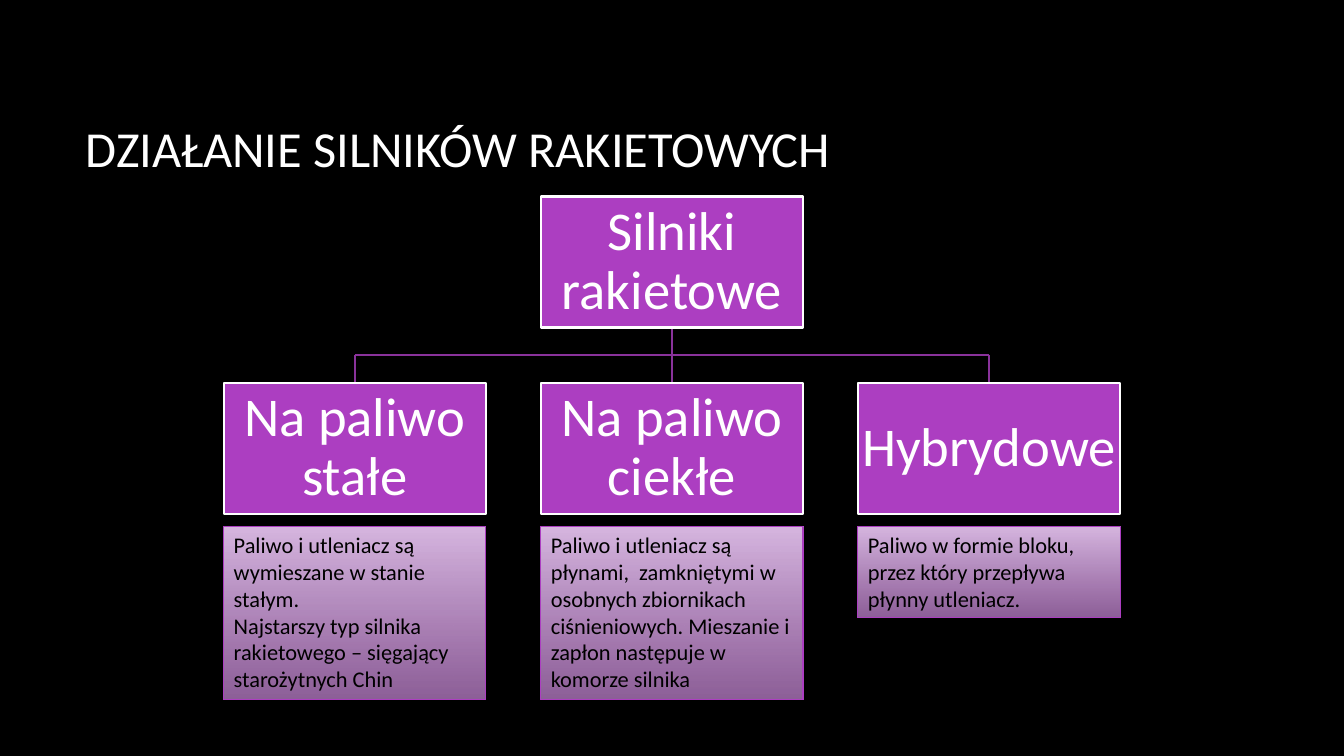
from lxml import etree
from pptx import Presentation
from pptx.dml.color import RGBColor
from pptx.enum.shapes import MSO_CONNECTOR, MSO_SHAPE
from pptx.enum.text import MSO_ANCHOR, MSO_AUTO_SIZE, PP_ALIGN
from pptx.oxml.ns import qn
from pptx.util import Inches, Pt

STRAIGHT = MSO_CONNECTOR.STRAIGHT
RECTANGLE = MSO_SHAPE.RECTANGLE
MIDDLE, TOP = MSO_ANCHOR.MIDDLE, MSO_ANCHOR.TOP
LEFT, CENTER = PP_ALIGN.LEFT, PP_ALIGN.CENTER
GROW = MSO_AUTO_SIZE.SHAPE_TO_FIT_TEXT

COLORS = {
    "background": "000000", "light": "FFFFFF", "dark": "000000",
    "box": "AC3EC1", "branch": "8A329B",
    "note_top": "D8B7E1", "note_bottom": "BF82CE",
}
rgb = {name: RGBColor.from_string(value) for name, value in COLORS.items()}

BOX_WIDTH, BOX_HEIGHT = 2.6, 1.3
FIRST_LEFT, COLUMN_STEP = 2.22, 3.145
ROOT_TOP, TYPE_TOP, NOTE_TOP = 1.95, 3.8, 5.22
ROOT_BOTTOM = ROOT_TOP + BOX_HEIGHT
BUS_Y = (ROOT_BOTTOM + TYPE_TOP) / 2

ENGINE_TYPES = [
    ("Na paliwo stałe", 1.72,
     ["Paliwo i utleniacz są wymieszane w stanie stałym.",
      "Najstarszy typ silnika rakietowego – sięgający starożytnych Chin"]),
    ("Na paliwo ciekłe", 1.72,
     ["Paliwo i utleniacz są płynami,  zamkniętymi w osobnych zbiornikach "
      "ciśnieniowych. Mieszanie i zapłon następuje w komorze silnika"]),
    ("Hybrydowe", 0.91,
     ["Paliwo w formie bloku, przez który przepływa płynny utleniacz."]),
]
lefts = [FIRST_LEFT + column * COLUMN_STEP for column in range(len(ENGINE_TYPES))]
centers = [left + BOX_WIDTH / 2 for left in lefts]

deck = Presentation()
deck.slide_width, deck.slide_height = Inches(13.33), Inches(7.5)
page = deck.slides.add_slide(deck.slide_layouts[5])
page.background.fill.solid()
page.background.fill.fore_color.rgb = rgb["background"]


def write(shape, texts, size, color, align, anchor):
    frame = shape.text_frame
    frame.word_wrap = True
    frame.vertical_anchor = anchor
    frame.text = "\n".join(texts)
    for para in frame.paragraphs:
        para.alignment = align
        for name, value in {"name": "Calibri", "size": Pt(size)}.items():
            setattr(para.font, name, value)
        para.font.color.rgb = rgb[color]


def add_box(left, top, height, line_width, line_color):
    box = page.shapes.add_shape(RECTANGLE, Inches(left), Inches(top),
                                Inches(BOX_WIDTH), Inches(height))
    box.shadow.inherit = False
    box.line.width = Pt(line_width)
    box.line.color.rgb = rgb[line_color]
    return box


# Title
title = page.shapes.title
place = {"left": 0.75, "top": 0.67, "width": 11.08, "height": 1.59}
for name, value in place.items():
    setattr(title, name, Inches(value))
write(title, ["DZIAŁANIE SILNIKÓW RAKIETOWYCH"], 36, "light", LEFT, MIDDLE)

# Branch lines: bus, left drop, trunk, right drop
segments = [
    (centers[0], BUS_Y, centers[2], BUS_Y),
    (centers[0], BUS_Y, centers[0], TYPE_TOP),
    (centers[1], ROOT_BOTTOM, centers[1], TYPE_TOP),
    (centers[2], BUS_Y, centers[2], TYPE_TOP),
]
branches = []
for segment in segments:
    branch = page.shapes.add_connector(STRAIGHT, *map(Inches, segment))
    branch.line.width = Pt(1.5)
    branch.line.color.rgb = rgb["branch"]
    etree.SubElement(branch._element.spPr, qn("a:effectLst"))
    branches.append(branch)
drops = branches[1:]

# Root box and engine types
labels = [("Silniki rakietowe", lefts[1], ROOT_TOP)]
labels += [(name, left, TYPE_TOP) for (name, _, _), left in zip(ENGINE_TYPES, lefts)]
boxes = []
for label, left, top in labels:
    box = add_box(left, top, BOX_HEIGHT, 1.5, "light")
    box.fill.solid()
    box.fill.fore_color.rgb = rgb["box"]
    write(box, [label], 39, "light", CENTER, MIDDLE)
    box.text_frame.paragraphs[0].line_spacing = 0.9
    for side in ("left", "top", "right", "bottom"):
        setattr(box.text_frame, f"margin_{side}", Inches(0.03))
    boxes.append(box)

root, *type_boxes = boxes
drops[1].begin_connect(root, 2)
for drop, box in zip(drops, type_boxes):
    drop.end_connect(box, 0)

# Descriptions under each type
for (_, height, texts), left in zip(ENGINE_TYPES, lefts):
    note = add_box(left, NOTE_TOP, height, 0.75, "box")
    note.fill.gradient()
    note.fill.gradient_angle = 270
    for stop, color in zip(note.fill.gradient_stops, ("note_top", "note_bottom")):
        stop.color.rgb = rgb[color]
    bottom_color = list(note._element.spPr.iter(qn("a:gs")))[-1][0]
    etree.SubElement(bottom_color, qn("a:alpha"), val="74000")
    write(note, texts, 16, "dark", LEFT, TOP)
    note.text_frame.auto_size = GROW

deck.save("out.pptx")
